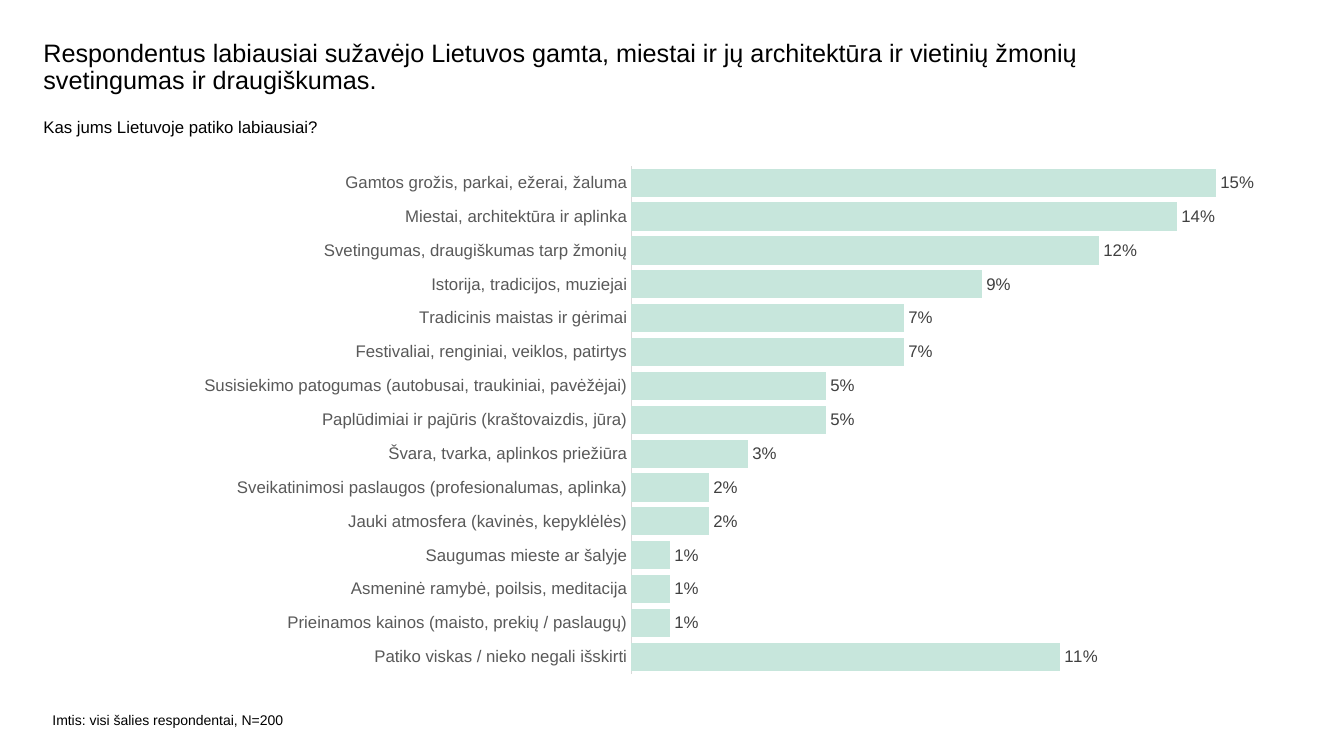
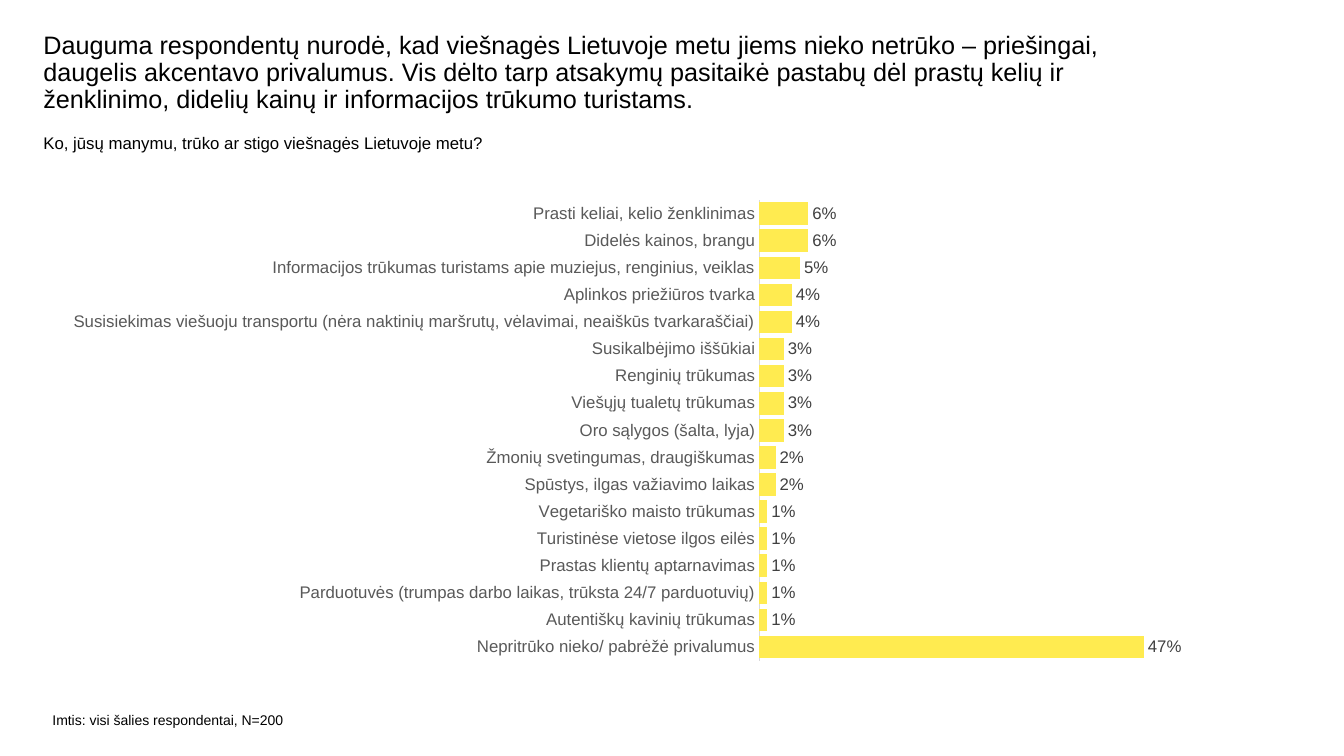
from lxml import etree
from pptx import Presentation
from pptx.chart.data import CategoryChartData
from pptx.dml.color import RGBColor
from pptx.enum import chart as ec
from pptx.oxml import ns
from pptx.util import Inches, Pt

FONT = "Arial"
BLACK, LABEL, VALUE, AXIS = "000000", "595959", "404040", "D9D9D9"
FOOTER = "Imtis: visi šalies respondentai, N=200"

SLIDES = [
    {
        "title": "Respondentus labiausiai sužavėjo Lietuvos gamta, miestai ir jų architektūra "
                 "ir vietinių žmonių svetingumas ir draugiškumas.",
        "title_top": 0.4,
        "question": "Kas jums Lietuvoje patiko labiausiai?",
        "question_top": 1.16,
        "color": "C7E6DC",
        "box": (1.81, 1.54, 10.86, 5.25),
        "plot": (0.41, 0.02, 0.57, 0.96),
        "max": 0.16,
        "answers": [
            ("Gamtos grožis, parkai, ežerai, žaluma", 0.15),
            ("Miestai, architektūra ir aplinka", 0.14),
            ("Svetingumas, draugiškumas tarp žmonių", 0.12),
            ("Istorija, tradicijos, muziejai", 0.09),
            ("Tradicinis maistas ir gėrimai", 0.07),
            ("Festivaliai, renginiai, veiklos, patirtys", 0.07),
            ("Susisiekimo patogumas (autobusai, traukiniai, pavėžėjai)", 0.05),
            ("Paplūdimiai ir pajūris (kraštovaizdis, jūra)", 0.05),
            ("Švara, tvarka, aplinkos priežiūra", 0.03),
            ("Sveikatinimosi paslaugos (profesionalumas, aplinka)", 0.02),
            ("Jauki atmosfera (kavinės, kepyklėlės)", 0.02),
            ("Saugumas mieste ar šalyje", 0.01),
            ("Asmeninė ramybė, poilsis, meditacija", 0.01),
            ("Prieinamos kainos (maisto, prekių / paslaugų)", 0.01),
            ("Patiko viskas / nieko negali išskirti", 0.11),
        ],
    },
    {
        "title": "Dauguma respondentų nurodė, kad viešnagės Lietuvoje metu jiems nieko netrūko – "
                 "priešingai, daugelis akcentavo privalumus. Vis dėlto tarp atsakymų pasitaikė "
                 "pastabų dėl prastų kelių ir ženklinimo, didelių kainų ir informacijos trūkumo "
                 "turistams.",
        "title_top": 0.32,
        "question": "Ko, jūsų manymu, trūko ar stigo viešnagės Lietuvoje metu?",
        "question_top": 1.32,
        "color": "FFEB50",
        "box": (0.52, 1.84, 12.3, 4.86),
        "plot": (0.57, 0.03, 0.33, 0.94),
        "max": 0.5,
        "answers": [
            ("Prasti keliai, kelio ženklinimas", 0.06),
            ("Didelės kainos, brangu", 0.06),
            ("Informacijos trūkumas turistams apie muziejus, renginius, veiklas", 0.05),
            ("Aplinkos priežiūros tvarka", 0.04),
            ("Susisiekimas viešuoju transportu (nėra naktinių maršrutų, vėlavimai, "
             "neaiškūs tvarkaraščiai)", 0.04),
            ("Susikalbėjimo iššūkiai", 0.03),
            ("Renginių trūkumas", 0.03),
            ("Viešųjų tualetų trūkumas", 0.03),
            ("Oro sąlygos (šalta, lyja)", 0.03),
            ("Žmonių svetingumas, draugiškumas", 0.02),
            ("Spūstys, ilgas važiavimo laikas", 0.02),
            ("Vegetariško maisto trūkumas", 0.01),
            ("Turistinėse vietose ilgos eilės", 0.01),
            ("Prastas klientų aptarnavimas", 0.01),
            ("Parduotuvės (trumpas darbo laikas, trūksta 24/7 parduotuvių)", 0.01),
            ("Autentiškų kavinių trūkumas", 0.01),
            ("Nepritrūko nieko/ pabrėžė privalumus", 0.47),
        ],
    },
]


def rgb(value):
    return RGBColor.from_string(value)


def style(font, size, color):
    font.name = FONT
    font.size = Pt(size)
    font.color.rgb = rgb(color)


def add_text(s, words, box, size, spacing=None):
    tf = s.shapes.add_textbox(*map(Inches, box)).text_frame
    tf.word_wrap = True
    tf.margin_left = tf.margin_right = tf.margin_top = tf.margin_bottom = 0
    p = tf.paragraphs[0]
    p.text = words
    p.line_spacing = spacing
    style(p.runs[0].font, size, BLACK)


def place_plot(chart, plot):
    area = chart._chartSpace.chart.plotArea
    for old in area.findall(ns.qn("c:layout")):
        area.remove(old)
    layout = etree.Element(ns.qn("c:layout"))
    manual = etree.SubElement(layout, ns.qn("c:manualLayout"))
    settings = [("layoutTarget", "inner"), ("xMode", "edge"), ("yMode", "edge")]
    for tag, val in settings + list(zip("xywh", plot)):
        etree.SubElement(manual, ns.qn("c:" + tag)).set("val", str(val))
    area.insert(0, layout)


def add_bars(s, page):
    data = CategoryChartData(number_format="0%")
    names, values = zip(*reversed(page["answers"]))
    data.categories = names
    data.add_series("Series 1", values)
    chart = s.shapes.add_chart(
        ec.XL_CHART_TYPE.BAR_CLUSTERED, *map(Inches, page["box"]), data).chart
    chart.has_title = chart.has_legend = False
    style(chart.font, 10, BLACK)

    cat = chart.category_axis
    cat.major_tick_mark = cat.minor_tick_mark = ec.XL_TICK_MARK.NONE
    cat.format.line.color.rgb = rgb(AXIS)
    cat.format.line.width = Pt(0.75)
    style(cat.tick_labels.font, 12, LABEL)

    val = chart.value_axis
    val.minimum_scale, val.maximum_scale = 0, page["max"]
    val.has_major_gridlines = False
    val.visible = False

    plot = chart.plots[0]
    plot.gap_width = 20
    plot.vary_by_categories = False
    fill = plot.series[0].format.fill
    fill.solid()
    fill.fore_color.rgb = rgb(page["color"])
    plot.has_data_labels = True
    labels = plot.data_labels
    labels.show_value = True
    labels.number_format = "0%"
    labels.number_format_is_linked = False
    labels.position = ec.XL_LABEL_POSITION.OUTSIDE_END
    style(labels.font, 12, VALUE)
    place_plot(chart, page["plot"])


def main():
    prs = Presentation()
    prs.slide_width, prs.slide_height = Inches(13.33), Inches(7.5)
    for page in SLIDES:
        s = prs.slides.add_slide(prs.slide_layouts[6])
        add_text(s, page["title"], (0.43, page["title_top"], 11.25, 0.6), 18, 0.9)
        add_text(s, page["question"], (0.43, page["question_top"], 11.89, 0.3), 12)
        add_text(s, FOOTER, (0.52, 7.06, 3.86, 0.27), 10)
        add_bars(s, page)
    prs.save("out.pptx")


if __name__ == "__main__":
    main()
